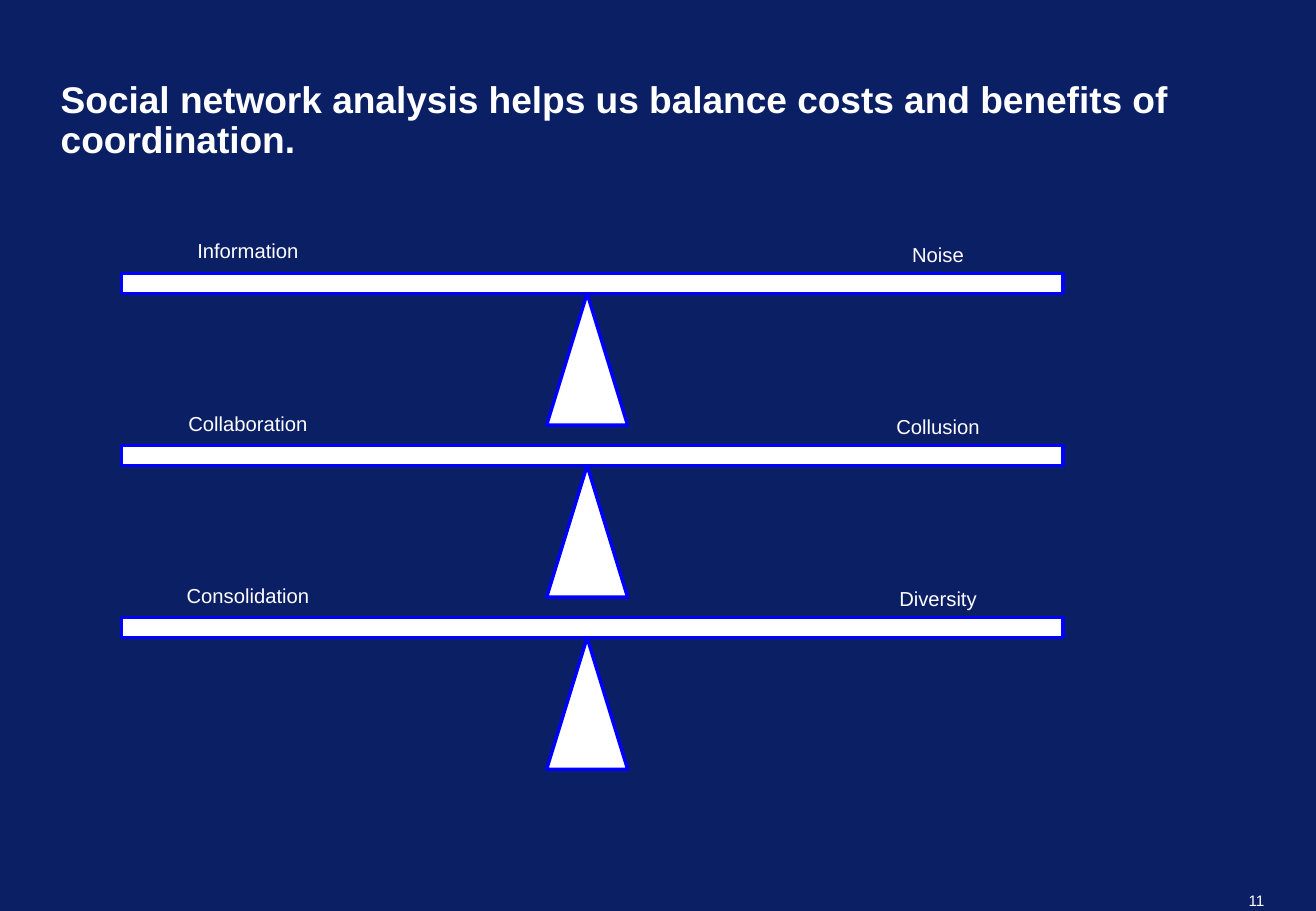
"""Build a slide of three balance beams weighing benefits against costs of coordination."""
import dataclasses

import pptx
import pptx.dml.color
import pptx.enum.shapes
import pptx.enum.text
import pptx.util

Pt = pptx.util.Pt
ALIGN = pptx.enum.text.PP_ALIGN
ANCHOR = pptx.enum.text.MSO_ANCHOR
SHAPE = pptx.enum.shapes.MSO_SHAPE


@dataclasses.dataclass(frozen=True)
class Theme:
    background = pptx.dml.color.RGBColor.from_string("0B1F65")
    foreground = pptx.dml.color.RGBColor.from_string("FFFFFF")
    outline = pptx.dml.color.RGBColor.from_string("0000FF")
    font = "Arial"
    title_size = 22
    label_size = 12
    number_size = 9


def add_text(slide, text, box, size, align, margins=(7.2, 3.6), wrap=True):
    """Add a text box with one paragraph and return the shape."""
    shape = slide.shapes.add_textbox(*(Pt(length) for length in box))
    frame = shape.text_frame
    frame.word_wrap = wrap
    frame.margin_left = frame.margin_right = Pt(margins[0])
    frame.margin_top = frame.margin_bottom = Pt(margins[1])
    frame.text = text
    paragraph = frame.paragraphs[0]
    paragraph.alignment = align
    font = paragraph.runs[0].font
    font.name = Theme.font
    font.size = Pt(size)
    font.color.rgb = Theme.foreground
    return shape


def add_part(slide, kind, box):
    """Add one outlined part of a balance."""
    shape = slide.shapes.add_shape(kind, *(Pt(length) for length in box))
    shape.shadow.inherit = False
    shape.fill.solid()
    shape.fill.fore_color.rgb = Theme.foreground
    shape.line.color.rgb = Theme.outline
    shape.line.width = Pt(2)


presentation = pptx.Presentation()
presentation.slide_width = Pt(780)
presentation.slide_height = Pt(540)
slide = presentation.slides.add_slide(presentation.slide_layouts[6])
slide.background.fill.solid()
slide.background.fill.fore_color.rgb = Theme.background

add_text(slide, "11", (738.6, 528.6, 10.8, 10.8), Theme.number_size,
         ALIGN.RIGHT, margins=(0, 0), wrap=False)

title = add_text(
    slide,
    "Social network analysis helps us balance costs and benefits of coordination.",
    (36, 30, 708, 66), Theme.title_size, ALIGN.LEFT, margins=(0, 0))
title.text_frame.vertical_anchor = ANCHOR.BOTTOM
title_paragraph = title.text_frame.paragraphs[0]
title_paragraph.line_spacing = 0.9
title_paragraph.runs[0].font.bold = True

balances = [
    ("Information", "Noise"),
    ("Collaboration", "Collusion"),
    ("Consolidation", "Diversity"),
]
first_beam_top, balance_pitch, beam_height = 162, 102, 12

for row, (benefit, cost) in enumerate(balances):
    beam_top = first_beam_top + row * balance_pitch
    add_part(slide, SHAPE.ISOSCELES_TRIANGLE, (324, beam_top + beam_height, 48, 78))
    add_part(slide, SHAPE.RECTANGLE, (72, beam_top, 558, beam_height))
    add_text(slide, benefit, (72, beam_top - 24, 150, 21.6),
             Theme.label_size, ALIGN.CENTER)
    add_text(slide, cost, (481, beam_top - 22, 150, 21.6),
             Theme.label_size, ALIGN.CENTER)

presentation.save("out.pptx")
